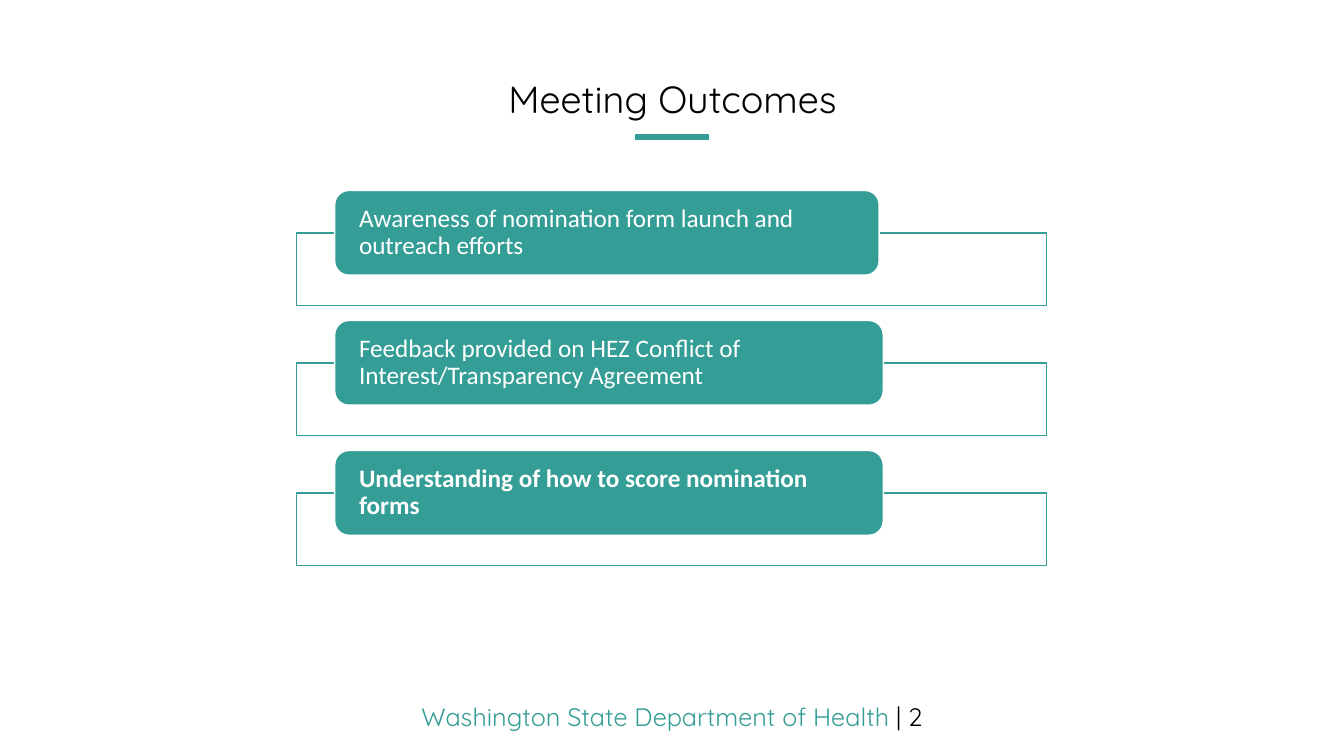
from dataclasses import dataclass

from lxml.etree import SubElement
from pptx import Presentation
from pptx.dml.color import RGBColor
from pptx.enum.shapes import MSO_CONNECTOR, MSO_SHAPE
from pptx.enum.text import MSO_ANCHOR, PP_ALIGN
from pptx.oxml.ns import qn
from pptx.util import Emu, Pt

PX = 9144


@dataclass(frozen=True)
class Theme:
    """Colours, fonts and type sizes of the slide."""
    teal: RGBColor = RGBColor(0x34, 0x9D, 0x96)
    white: RGBColor = RGBColor(0xFF, 0xFF, 0xFF)
    black: RGBColor = RGBColor(0, 0, 0)
    heading: str = "Quicksand"
    body: str = "Calibri"
    title_size: int = 27
    text_size: int = 18


THEME = Theme()
OUTCOMES = [
    ("Awareness of nomination form launch and outreach efforts", 540, False),
    ("Feedback provided on HEZ Conflict of Interest/Transparency Agreement", 544, False),
    ("Understanding of how to score nomination forms", 544, True),
]


def px(*lengths):
    """Turn px lengths into EMU."""
    return [Emu(n * PX) for n in lengths]


def add_run(p, text, font, size, color, bold=False):
    """Add one formatted run to a paragraph."""
    r = p.add_run()
    r.text = text
    r.font.name = font
    r.font.size = Pt(size)
    r.font.bold = bold
    r.font.color.rgb = color


def add_heading_text(slide, box, runs, size, spacing=1.0):
    """Add a centred text box in the heading font from (text, colour) runs."""
    tf = slide.shapes.add_textbox(*px(*box)).text_frame
    tf.word_wrap = True
    tf.vertical_anchor = MSO_ANCHOR.MIDDLE
    p = tf.paragraphs[0]
    p.alignment = PP_ALIGN.CENTER
    p.line_spacing = spacing
    for text, color in runs:
        add_run(p, text, THEME.heading, size, color)


def add_rule(slide, x1, x2, y):
    """Add the thick accent line under the title."""
    line = slide.shapes.add_connector(MSO_CONNECTOR.STRAIGHT, *px(x1, y, x2, y))
    line.line.color.rgb = THEME.teal
    line.line.width = Pt(4)
    SubElement(line._element.spPr, qn("a:effectLst"))


def add_block(slide, kind, box, fill, outline):
    """Add a flat shape with a thin outline."""
    sp = slide.shapes.add_shape(kind, *px(*box))
    sp.shadow.inherit = False
    sp.fill.solid()
    sp.fill.fore_color.rgb = fill
    sp.line.color.rgb = outline
    sp.line.width = Pt(1)
    return sp


def add_outcome(slide, top, text, width, bold):
    """Add an outlined bar with a rounded label overlapping its top edge."""
    add_block(slide, MSO_SHAPE.RECTANGLE, (294, top + 42, 744, 72), THEME.white, THEME.teal)
    label = add_block(slide, MSO_SHAPE.ROUNDED_RECTANGLE, (332, top, width, 84),
                      THEME.teal, THEME.white)
    tf = label.text_frame
    tf.word_wrap = True
    tf.vertical_anchor = MSO_ANCHOR.MIDDLE
    tf.margin_left, tf.margin_top, tf.margin_right, tf.margin_bottom = px(20, 0, 20, 0)
    p = tf.paragraphs[0]
    p.alignment = PP_ALIGN.LEFT
    p.line_spacing = 0.9
    add_run(p, text, THEME.body, THEME.text_size, THEME.white, bold)


def main():
    """Build the slide and save it."""
    prs = Presentation()
    prs.slide_width, prs.slide_height = px(1333, 750)
    slide = prs.slides.add_slide(prs.slide_layouts[6])
    add_rule(slide, 630, 703, 136)
    add_heading_text(slide, (0, 691, 1333, 40),
                     [("Washington State Department of Health ", THEME.teal),
                      ("| 2", THEME.black)], THEME.text_size)
    add_heading_text(slide, (1, 74, 1332, 53),
                     [("Meeting Outcomes", THEME.black)], THEME.title_size, 0.9)
    for i, (text, width, bold) in enumerate(OUTCOMES):
        add_outcome(slide, 189 + 129 * i, text, width, bold)
    prs.save("out.pptx")


if __name__ == "__main__":
    main()
